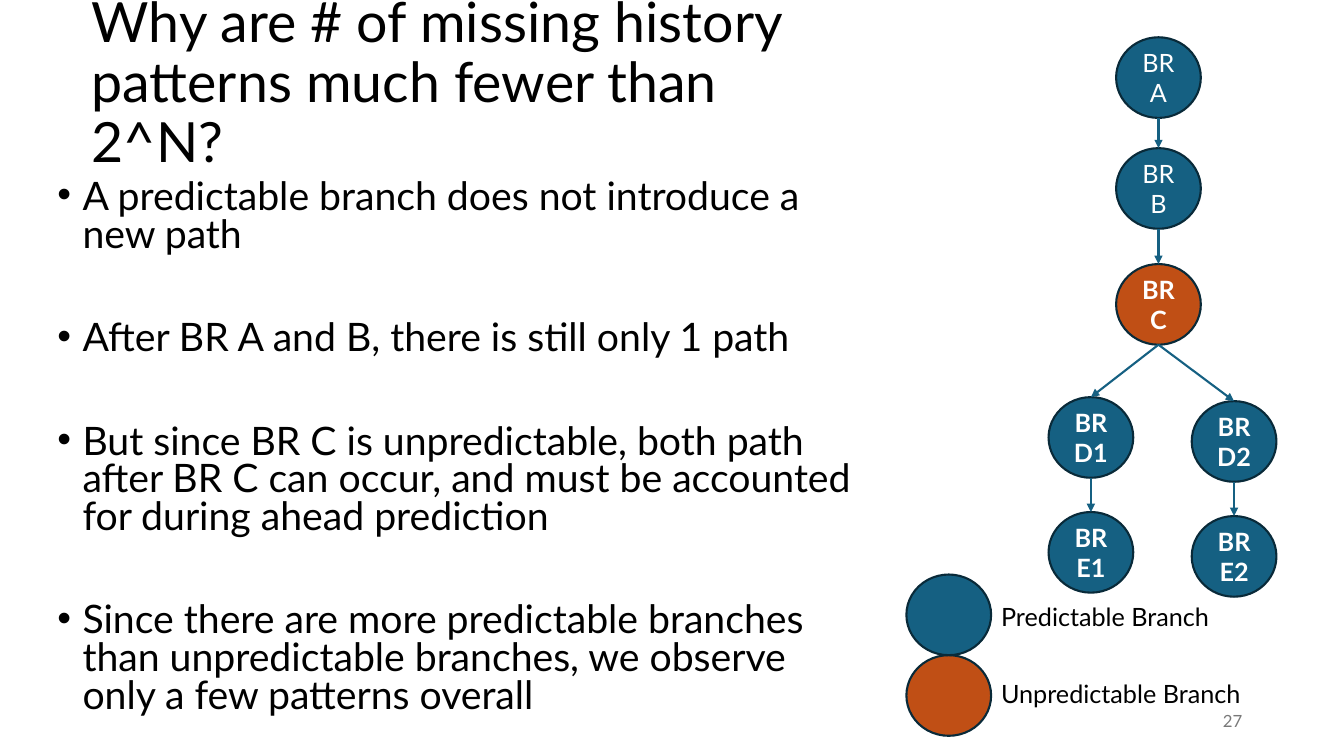
import pptx
import pptx.util
import pptx.dml.color
import pptx.enum.shapes
import pptx.enum.text
import pptx.oxml
import pptx.oxml.ns

Inches = pptx.util.Inches
Pt = pptx.util.Pt
ALIGN = pptx.enum.text.PP_ALIGN
ANCHOR = pptx.enum.text.MSO_ANCHOR
BLUE, ORANGE, OUTLINE = "156082", "C04F15", "092A39"
NODE_W, NODE_H = 0.84, 0.8


def color(value):
    return pptx.dml.color.RGBColor.from_string(value)


def add_xml(parent, tag, **attrs):
    el = pptx.oxml.parse_xml(f"<a:{tag} {pptx.oxml.ns.nsdecls('a')}/>")
    for name, value in attrs.items():
        el.set(name, str(value))
    parent.append(el)


def write(p, text, size=18, fill="000000", bold=False, align=ALIGN.LEFT,
          spacing=None, before=0, bullet=False):
    if bullet:
        pPr = p._p.get_or_add_pPr()
        pPr.set("marL", str(Inches(0.25)))
        pPr.set("indent", str(Inches(-0.25)))
        add_xml(pPr, "buFont", typeface="Arial")
        add_xml(pPr, "buChar", char="•")
    p.alignment = align
    p.space_before = Pt(before)
    if spacing:
        p.line_spacing = spacing
    r = p.add_run()
    r.text = text
    r.font.name = "Lato"
    r.font.size = Pt(size)
    r.font.bold = bold
    r.font.color.rgb = color(fill)


class BranchSlide:
    def __init__(self, prs):
        self.s = prs.slides.add_slide(prs.slide_layouts[5])

    def title(self, text, x, y, w, h):
        sp = self.s.shapes.title
        sp.left, sp.top, sp.width, sp.height = map(Inches, (x, y, w, h))
        tf = sp.text_frame
        tf.word_wrap = True
        tf.auto_size = pptx.enum.text.MSO_AUTO_SIZE.NONE
        tf.vertical_anchor = ANCHOR.MIDDLE
        write(tf.paragraphs[0], text, size=39.6, spacing=0.9)

    def text(self, lines, x, y, w, h, wrap=True, anchor=ANCHOR.TOP, gap=0, **fmt):
        tf = self.s.shapes.add_textbox(*map(Inches, (x, y, w, h))).text_frame
        tf.word_wrap = wrap
        tf.vertical_anchor = anchor
        for i, line in enumerate(lines):
            p = tf.add_paragraph() if i else tf.paragraphs[0]
            write(p, line, before=gap if i else 0, **fmt)

    def node(self, x, y, fill, text="", bold=False):
        sp = self.s.shapes.add_shape(pptx.enum.shapes.MSO_SHAPE.OVAL,
                                     *map(Inches, (x, y, NODE_W, NODE_H)))
        sp.shadow.inherit = False
        sp.fill.solid()
        sp.fill.fore_color.rgb = color(fill)
        sp.line.color.rgb = color(OUTLINE)
        sp.line.width = Pt(1.5)
        if text:
            tf = sp.text_frame
            tf.word_wrap = True
            tf.vertical_anchor = ANCHOR.MIDDLE
            write(tf.paragraphs[0], text, fill="FFFFFF", bold=bold, align=ALIGN.CENTER)
        return sp

    def arrow(self, parent, child):
        cx = self.s.shapes.add_connector(
            pptx.enum.shapes.MSO_CONNECTOR.STRAIGHT,
            parent.left + parent.width // 2, parent.top + parent.height,
            child.left + child.width // 2, child.top)
        cx.line.color.rgb = color(BLUE)
        cx.line.width = Pt(1.5)
        add_xml(cx.line._get_or_add_ln(), "tailEnd", type="triangle")
        add_xml(cx._element.spPr, "effectLst")


def main():
    prs = pptx.Presentation()
    prs.slide_width, prs.slide_height = Inches(13.33), Inches(7.5)
    slide = BranchSlide(prs)
    slide.title("Why are # of missing history patterns much fewer than 2^N?",
                0.81, 0.38, 7.42, 0.92)
    slide.text([
        "A predictable branch does not introduce a new path",
        "After BR A and B, there is still only 1 path",
        "But since BR C is unpredictable, both path after BR C can occur, "
        "and must be accounted for during ahead prediction",
        "Since there are more predictable branches than unpredictable branches, "
        "we observe only a few patterns overall",
    ], 0.47, 1.74, 8.11, 5.56, gap=47, size=28, spacing=0.8, bullet=True)
    slide.text(["27"], 9.42, 6.95, 3, 0.4, anchor=ANCHOR.MIDDLE,
               size=12, fill="797979", align=ALIGN.RIGHT)

    branches = [
        ("A", 11.07, 0.37, BLUE, False),
        ("B", 11.07, 1.47, BLUE, False),
        ("C", 11.07, 2.62, ORANGE, True),
        ("D1", 10.4, 3.94, BLUE, True),
        ("E1", 10.4, 5.08, BLUE, True),
        ("D2", 11.82, 3.98, BLUE, True),
        ("E2", 11.82, 5.12, BLUE, True),
    ]
    nodes = {name: slide.node(x, y, fill, f"BR {name}", bold)
             for name, x, y, fill, bold in branches}
    paths = [("A", "B"), ("B", "C"), ("C", "D1"), ("D1", "E1"), ("C", "D2"), ("D2", "E2")]
    for parent, child in paths:
        slide.arrow(nodes[parent], nodes[child])

    legend = [("Unpredictable Branch", 6.5, 6.68, 2.58, ORANGE),
              ("Predictable Branch", 5.7, 5.92, 2.28, BLUE)]
    for label, node_y, label_y, label_w, fill in legend:
        slide.node(8.99, node_y, fill)
        slide.text([label], 9.83, label_y, label_w, 0.4, wrap=False)
    prs.save("out.pptx")


if __name__ == "__main__":
    main()
